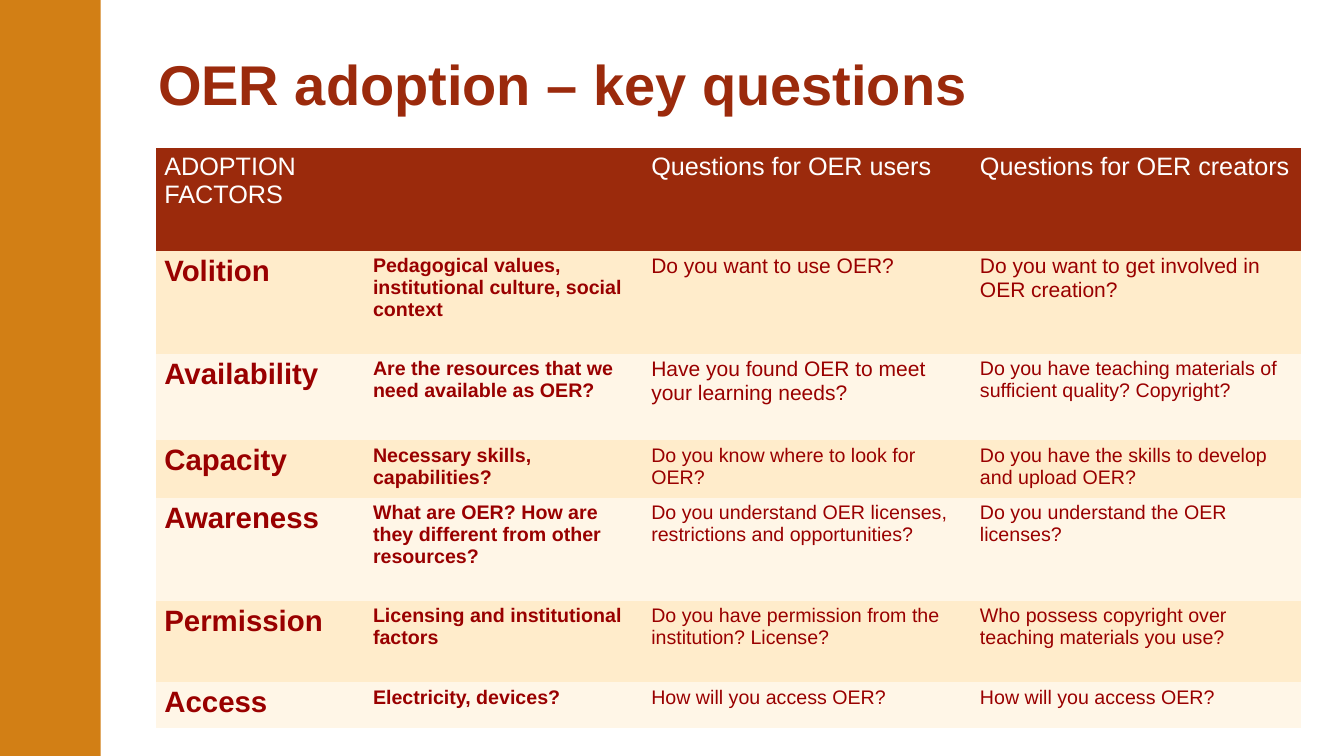
import pptx
import pptx.dml.color
import pptx.enum.shapes
import pptx.enum.text
import pptx.util

Inches = pptx.util.Inches
THEME = {
    "font": "Arial",
    "colours": {"rust": "9B2A0C", "text": "990000", "white": "FFFFFF",
                "amber": "D27F15", "bands": ("FFECCB", "FFF6E7")},
    "sizes": {"title": 40, "header": 18, "factor": 21, "large": 15, "body": 14},
}
COLOURS, SIZES = THEME["colours"], THEME["sizes"]
PAGE_WIDTH, PAGE_HEIGHT = 13.33, 7.5
PLAIN_TABLE = "{2D5ABB26-0587-4C30-8999-92F81FD0307C}"

COLUMN_WIDTHS = (2.07, 2.76, 3.26, 3.26)
ROW_HEIGHTS = (1.02, 1.02, 0.86, 0.57, 1.02, 0.81, 0.45)
ROWS = (
    ("ADOPTION FACTORS", "", "Questions for OER users", "Questions for OER creators"),
    ("Volition", "Pedagogical values, institutional culture, social context",
     "Do you want to use OER?", "Do you want to get involved in OER creation?"),
    ("Availability", "Are the resources that we need available as OER?",
     "Have you found OER to meet your learning needs?",
     "Do you have teaching materials of sufficient quality? Copyright?"),
    ("Capacity", "Necessary skills, capabilities?",
     "Do you know where to look for OER?",
     "Do you have the skills to develop and upload OER?"),
    ("Awareness", "What are OER? How are they different from other resources?",
     "Do you understand OER licenses, restrictions and opportunities?",
     "Do you understand the OER licenses?"),
    ("Permission", "Licensing and institutional factors",
     "Do you have permission from the institution? License?",
     "Who possess copyright over teaching materials you use?"),
    ("Access", "Electricity, devices?",
     "How will you access OER?", "How will you access OER?"),
)
LARGE_CELLS = {(1, 2), (1, 3), (2, 2)}


def set_all(target, values):
    for name, value in values.items():
        setattr(target, name, value)


def paint(fill, colour):
    fill.solid()
    fill.fore_color.rgb = pptx.dml.color.RGBColor.from_string(colour)


def write(frame, text, size, colour, bold):
    para = frame.paragraphs[0]
    para.text = text
    set_all(para.font, {"name": THEME["font"], "size": pptx.util.Pt(SIZES[size]),
                        "bold": bold})
    para.font.color.rgb = pptx.dml.color.RGBColor.from_string(COLOURS[colour])


def cell_format(row, column):
    """Return text size, text colour, boldness and fill of a cell."""
    if row == 0:
        return "header", "white", False, COLOURS["rust"]
    if column == 0:
        size = "factor"
    else:
        size = "large" if (row, column) in LARGE_CELLS else "body"
    return size, "text", column < 2, COLOURS["bands"][(row - 1) % 2]


def add_question_table(page, left, top):
    box = page.shapes.add_table(
        len(ROWS), len(COLUMN_WIDTHS), Inches(left), Inches(top),
        Inches(sum(COLUMN_WIDTHS)), Inches(sum(ROW_HEIGHTS)))
    table = box.table
    # Use the style without borders
    table._tbl.tblPr.find(pptx.oxml.ns.qn("a:tableStyleId")).text = PLAIN_TABLE
    for column, width in zip(table.columns, COLUMN_WIDTHS):
        column.width = Inches(width)
    for row, height in zip(table.rows, ROW_HEIGHTS):
        row.height = Inches(height)
    for r, texts in enumerate(ROWS):
        for c, text in enumerate(texts):
            size, colour, bold, fill = cell_format(r, c)
            cell = table.cell(r, c)
            set_all(cell, {"margin_left": Inches(0.08), "margin_right": Inches(0.08),
                           "margin_top": Inches(0.04), "margin_bottom": Inches(0.04)})
            paint(cell.fill, fill)
            write(cell.text_frame, text, size, colour, bold)


def add_title(page, left, top, width, height):
    box = page.shapes.add_textbox(*map(Inches, (left, top, width, height)))
    set_all(box.text_frame, {"word_wrap": True, "margin_top": Inches(0.13),
                             "margin_bottom": Inches(0.02),
                             "vertical_anchor": pptx.enum.text.MSO_ANCHOR.TOP})
    write(box.text_frame, "OER adoption – key questions", "title", "rust", True)


def add_side_bar(page, left, top, width, height):
    bar = page.shapes.add_shape(pptx.enum.shapes.MSO_SHAPE.RECTANGLE,
                                *map(Inches, (left, top, width, height)))
    bar.shadow.inherit = False
    paint(bar.fill, COLOURS["amber"])
    bar.line.fill.background()


def main():
    deck = pptx.Presentation()
    set_all(deck, {"slide_width": Inches(PAGE_WIDTH),
                   "slide_height": Inches(PAGE_HEIGHT)})
    page = deck.slides.add_slide(deck.slide_layouts[6])
    add_question_table(page, 1.55, 1.47)
    add_title(page, 1.47, 0.36, 11.81, 0.77)
    add_side_bar(page, 0, 0, 1, PAGE_HEIGHT)
    deck.save("out.pptx")


if __name__ == "__main__":
    main()
